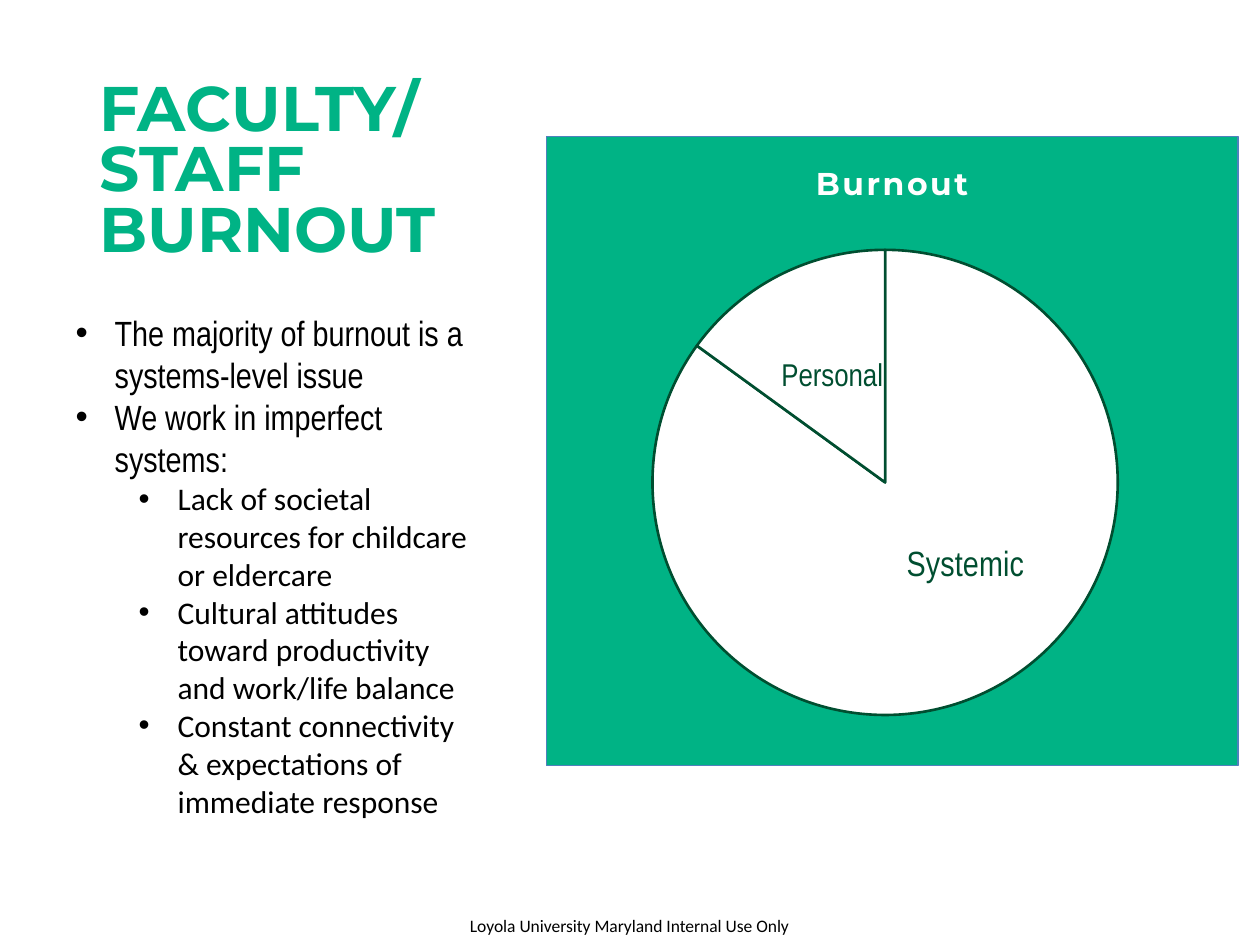
from dataclasses import dataclass

from lxml import etree
from pptx import Presentation
from pptx.chart.data import CategoryChartData
from pptx.dml.color import RGBColor
from pptx.enum import chart as chart_enum, text
from pptx.oxml import parse_xml
from pptx.oxml.ns import nsdecls, qn
from pptx.util import Inches, Pt


@dataclass(frozen=True)
class Theme:
    green: str = "00B385"
    dark_green: str = "004E30"
    blue: str = "4F81BD"
    white: str = "FFFFFF"
    black: str = "000000"
    heading_font: str = "Montserrat"
    body_font: str = "Calibri"
    narrow_font: str = "Arial Narrow"
    title_size: int = 36
    body_size: int = 20
    detail_size: int = 18
    footer_size: int = 10


def write(paragraph, words, *, font, size, color, bold=False, spacing=None):
    """Add a formatted run; spacing is letter spacing in points."""
    run = paragraph.add_run()
    run.text = words
    run.font.name = font
    run.font.size = Pt(size)
    run.font.bold = bold
    run.font.color.rgb = RGBColor.from_string(color)
    if spacing:
        run.font._element.set("spc", str(round(spacing * 100)))


def manual_layout(x, y, modes="", size=""):
    return parse_xml(f'<c:layout {nsdecls("c")}><c:manualLayout>{modes}'
                     f'<c:x val="{x}"/><c:y val="{y}"/>{size}'
                     '</c:manualLayout></c:layout>')


EDGE_MODES = '<c:xMode val="edge"/><c:yMode val="edge"/>'


class SlideBuilder:
    def __init__(self, slide, theme):
        self.slide = slide
        self.theme = theme

    def place(self, shape, left, top, width, height):
        shape.left, shape.top = Inches(left), Inches(top)
        shape.width, shape.height = Inches(width), Inches(height)

    def title(self, words, box):
        shape = self.slide.shapes.title
        self.place(shape, *box)
        frame = shape.text_frame
        frame.word_wrap = True
        frame.auto_size = text.MSO_AUTO_SIZE.NONE
        frame.vertical_anchor = text.MSO_ANCHOR.BOTTOM
        paragraph = frame.paragraphs[0]
        paragraph.alignment = text.PP_ALIGN.LEFT
        paragraph.line_spacing = 0.8
        write(paragraph, words[0], font=self.theme.heading_font, bold=True,
              size=self.theme.title_size, color=self.theme.green)
        for line in words[1:]:
            paragraph.add_line_break()
            write(paragraph, line, font=self.theme.heading_font, bold=True,
                  size=self.theme.title_size, color=self.theme.green)

    def bullets(self, items, box):
        """Fill the body placeholder from (level, words) pairs."""
        shape = self.slide.placeholders[1]
        self.place(shape, *box)
        frame = shape.text_frame
        frame.word_wrap = True
        frame.auto_size = text.MSO_AUTO_SIZE.NONE
        styles = [(self.theme.narrow_font, self.theme.body_size),
                  (self.theme.body_font, self.theme.detail_size)]
        for index, (level, words) in enumerate(items):
            paragraph = frame.add_paragraph() if index else frame.paragraphs[0]
            paragraph.level = level
            paragraph.space_before = Pt(0)
            properties = paragraph._p.get_or_add_pPr()
            properties.set("marL", str(Inches(0.31 + 0.5 * level)))
            properties.set("indent", str(Inches(-0.31)))
            etree.SubElement(properties, qn("a:buFont")).set("typeface", "Arial")
            etree.SubElement(properties, qn("a:buChar")).set("char", "•")
            font, size = styles[level]
            write(paragraph, words, font=font, size=size, color=self.theme.black)

    def footer(self, words, box):
        shape = self.slide.shapes.add_textbox(*map(Inches, box))
        frame = shape.text_frame
        frame.margin_left = frame.margin_right = 0
        frame.margin_top = frame.margin_bottom = 0
        frame.word_wrap = False
        write(frame.paragraphs[0], words, font=self.theme.body_font,
              size=self.theme.footer_size, color=self.theme.black)

    def pie(self, title, slices, box):
        """Draw a pie from (name, value, label size, label offset) rows."""
        theme = self.theme
        data = CategoryChartData()
        data.categories = [row[0] for row in slices]
        data.add_series("Series 1", [row[1] for row in slices])
        chart = self.slide.shapes.add_chart(
            chart_enum.XL_CHART_TYPE.PIE, *map(Inches, box), data).chart
        chart.font.name = theme.body_font
        chart.font.size = Pt(theme.footer_size)
        chart.font.color.rgb = RGBColor.from_string(theme.black)
        chart.has_legend = False
        self.chart_area(chart)

        chart.has_title = True
        write(chart.chart_title.text_frame.paragraphs[0], title, bold=True,
              font=theme.heading_font, size=theme.detail_size,
              color=theme.white, spacing=1.5)
        chart.chart_title.include_in_layout = False
        chart.chart_title._element.find(qn("c:tx")).addnext(
            manual_layout(0.37, 0.04, EDGE_MODES))

        plot_area = chart._chartSpace.chart.plotArea
        for layout in plot_area.findall(qn("c:layout")):
            plot_area.remove(layout)
        plot_area.insert(0, manual_layout(
            0.15, 0.18, '<c:layoutTarget val="inner"/>' + EDGE_MODES,
            '<c:w val="0.68"/><c:h val="0.74"/>'))

        plot = chart.plots[0]
        plot.vary_by_categories = False
        for index, (name, _, size, offset) in enumerate(slices):
            point = plot.series[0].points[index]
            point.format.fill.solid()
            point.format.fill.fore_color.rgb = RGBColor.from_string(theme.white)
            point.format.line.color.rgb = RGBColor.from_string(theme.dark_green)
            point.format.line.width = Pt(1.5)
            label = point.data_label
            write(label.text_frame.paragraphs[0], name, size=size,
                  font=theme.narrow_font, color=theme.dark_green)
            label.position = chart_enum.XL_LABEL_POSITION.CENTER
            if offset:
                label._dLbl.find(qn("c:idx")).addnext(manual_layout(*offset))

    def chart_area(self, chart):
        area = parse_xml(
            f'<c:spPr {nsdecls("c", "a")}><a:solidFill><a:srgbClr '
            f'val="{self.theme.green}"/></a:solidFill><a:ln w="{Pt(0.75)}">'
            f'<a:solidFill><a:srgbClr val="{self.theme.blue}"/></a:solidFill>'
            '</a:ln></c:spPr>')
        chart._chartSpace.find(qn("c:txPr")).addprevious(area)


def main():
    presentation = Presentation()
    presentation.slide_width, presentation.slide_height = Inches(10), Inches(7.5)
    slide = presentation.slides.add_slide(presentation.slide_layouts[1])
    theme = Theme()
    builder = SlideBuilder(slide, theme)
    builder.footer("Loyola University Maryland Internal Use Only",
                   (3.73, 7.26, 2.57, 0.17))
    builder.title(["FACULTY/", "STAFF BURNOUT"], (0.69, 0.42, 3.38, 1.73))
    builder.pie("Burnout", [
        ("Systemic", 85, theme.body_size, (0.04, -0.03)),
        ("Personal", 15, theme.detail_size, None),
    ], (4.33, 1.08, 5.5, 5))
    builder.bullets([
        (0, "The majority of burnout is a systems-level issue"),
        (0, "We work in imperfect systems:"),
        (1, "Lack of societal resources for childcare or eldercare"),
        (1, "Cultural attitudes toward productivity and work/life balance"),
        (1, "Constant connectivity & expectations of immediate response"),
    ], (0.5, 2.42, 3.37, 4.06))
    presentation.save("out.pptx")


if __name__ == "__main__":
    main()
